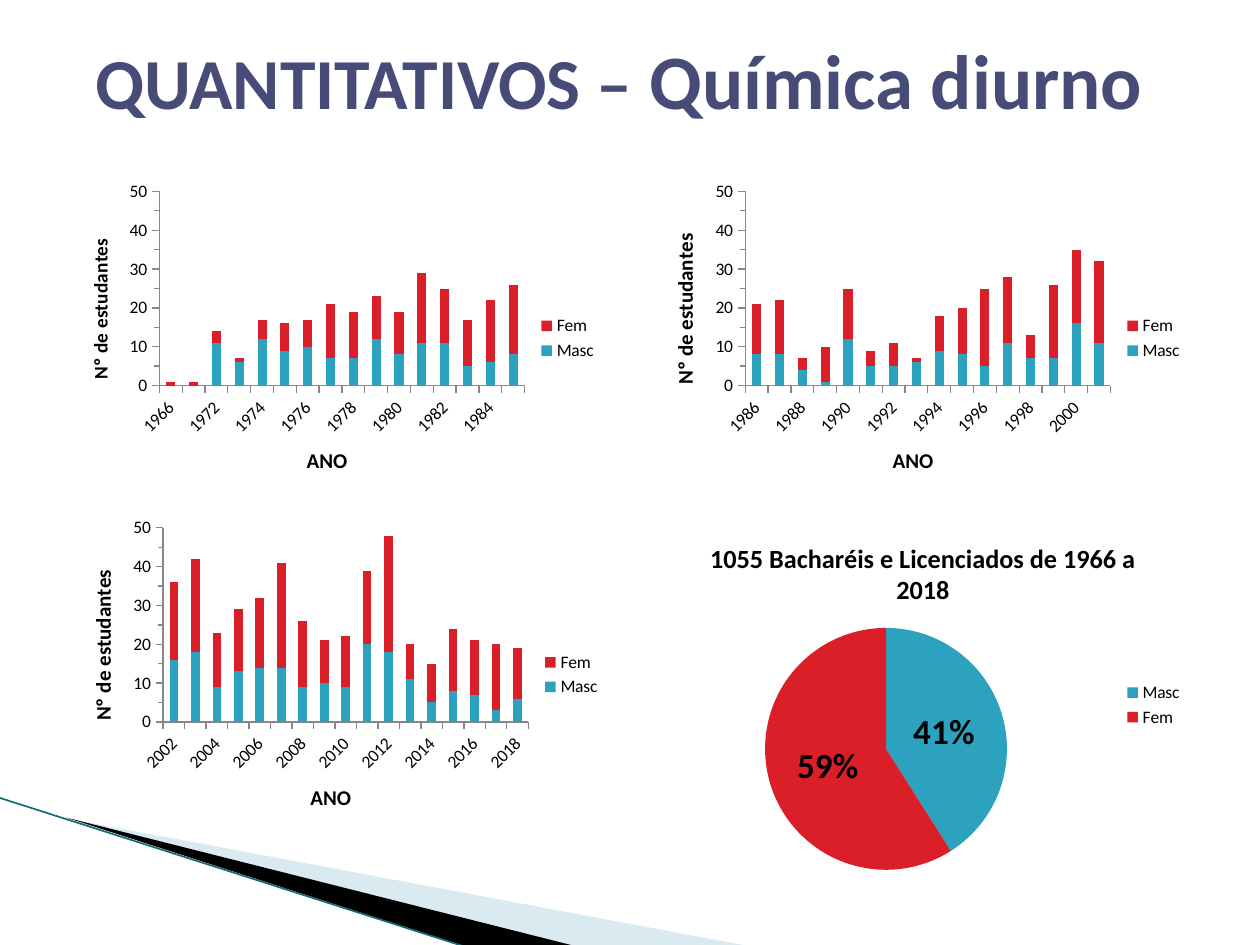
from lxml import etree
from pptx import Presentation, util as u
from pptx.chart.data import CategoryChartData
from pptx.dml.color import RGBColor
from pptx.enum import chart as ch, shapes, text
from pptx.oxml import parse_xml
from pptx.oxml.ns import nsdecls, qn

FONT = "Calibri"
BLACK = RGBColor(0, 0, 0)
AXIS = RGBColor(0x87, 0x87, 0x87)
TITLE = RGBColor(0x47, 0x4B, 0x78)
BLUE = RGBColor(0x2D, 0xA2, 0xBF)
RED = RGBColor(0xDA, 0x1F, 0x28)
PALE = RGBColor(0xA0, 0xCB, 0xDC)
TEAL = RGBColor(0x17, 0x69, 0x7C)

# Content
HEADING = [("QUANTITATIVOS – ", 41), ("Química diurno", 44)]
SERIES = [("Masc", BLUE), ("Fem", RED)]
X_TITLE, Y_TITLE = "ANO", "Nº de estudantes"
BARS = [
    dict(at=(0.48, 1.39), y_size=11, years=[1966, *range(1971, 1986)],
         Masc=[0, 0, 11, 6, 12, 9, 10, 7, 7, 12, 8, 11, 11, 5, 6, 8],
         Fem=[1, 1, 3, 1, 5, 7, 7, 14, 12, 11, 11, 18, 14, 12, 16, 18]),
    dict(at=(5.13, 1.39), y_size=12, years=range(1986, 2002),
         Masc=[8, 8, 4, 1, 12, 5, 5, 6, 9, 8, 5, 11, 7, 7, 16, 11],
         Fem=[13, 14, 3, 9, 13, 4, 6, 1, 9, 12, 20, 17, 6, 19, 19, 21]),
    dict(at=(0.51, 4.06), y_size=12, years=range(2002, 2019),
         Masc=[16, 18, 9, 13, 14, 14, 9, 10, 9, 20, 18, 11, 5, 8, 7, 3, 6],
         Fem=[20, 24, 14, 16, 18, 27, 17, 11, 13, 19, 30, 9, 10, 16, 14, 17, 13]),
]
BAR_SIZE = (4.36, 2.59)
BAR_PLOT = (0.18, 0.05, 0.665, 0.595)  # shares of the chart's size
PIE_TITLE = "1055 Bacharéis e Licenciados de 1966 a 2018"
PIE_VALUES = [41, 59]
PIE_BOX = (5.16, 4.14, 4.33, 2.91)
PIE_PLOT = (0.21, 0.29, 0.445, 0.66)
WEDGES = [
    ([(0.55, 6.5), (5.95, 7.51), (4.56, 7.51)], PALE, 40),
    ([(0.53, 6.49), (4.57, 7.51), (3.72, 7.52)], BLACK, 100),
]
EDGE = (-0.01, 6.33, 3.71, 7.52)


def inches(values):
    return [u.Inches(v) for v in values]


def style(font, size, bold=False, color=BLACK):
    values = dict(name=FONT, size=u.Pt(size), bold=bold)
    for key, value in values.items():
        setattr(font, key, value)
    font.color.rgb = color


def paint(fill, color):
    fill.solid()
    fill.fore_color.rgb = color


def set_title(owner, words, size):
    tf = (owner.chart_title if hasattr(owner, "chart_title") else owner.axis_title).text_frame
    r = tf.paragraphs[0].add_run()
    r.text = words
    style(r.font, size, True)


def place_plot(chart, shares):
    area = chart._chartSpace.chart.plotArea
    for old in area.findall(qn("c:layout")):
        area.remove(old)
    parts = "".join(f'<c:{k} val="{v}"/>' for k, v in zip("xywh", shares))
    area.insert(0, parse_xml(
        f'<c:layout {nsdecls("c")}><c:manualLayout><c:layoutTarget val="inner"/>'
        f'<c:xMode val="edge"/><c:yMode val="edge"/>{parts}</c:manualLayout></c:layout>'))


def add_chart(s, kind, box, data, plot):
    chart = s.shapes.add_chart(kind, *inches(box), data).chart
    style(chart.font, 10)
    chart.has_title = False
    chart.has_legend = True
    chart.legend.position = ch.XL_LEGEND_POSITION.RIGHT
    chart.legend.include_in_layout = False
    place_plot(chart, plot)
    return chart


def add_bars(s, spec):
    data = CategoryChartData()
    data.categories = [str(year) for year in spec["years"]]
    for name, _ in SERIES:
        data.add_series(name, spec[name])
    chart = add_chart(s, ch.XL_CHART_TYPE.COLUMN_STACKED, spec["at"] + BAR_SIZE, data, BAR_PLOT)
    plot = chart.plots[0]
    plot.gap_width, plot.overlap, plot.vary_by_categories = 150, 100, False
    for series, (_, color) in zip(plot.series, SERIES):
        paint(series.format.fill, color)

    x, y = chart.category_axis, chart.value_axis
    for axis, words, size in ((x, X_TITLE, 12), (y, Y_TITLE, spec["y_size"])):
        axis.has_major_gridlines = False
        axis.major_tick_mark = ch.XL_TICK_MARK.OUTSIDE
        axis.format.line.color.rgb = AXIS
        style(axis.tick_labels.font, 10)
        set_title(axis, words, size)
    y.minimum_scale, y.maximum_scale, y.major_unit, y.minor_unit = 0, 50, 10, 5
    y.minor_tick_mark = ch.XL_TICK_MARK.OUTSIDE

    # Slanted labels, every second year
    cat = x._element
    cat.find(qn("c:txPr")).find(qn("a:bodyPr")).set("rot", "-2700000")
    skip = etree.Element(qn("c:tickLblSkip"), val="2")
    cat.find(qn("c:noMultiLvlLbl")).addprevious(skip)


def add_pie(s):
    data = CategoryChartData()
    data.categories = [name for name, _ in SERIES]
    data.add_series("Series 1", PIE_VALUES)
    chart = add_chart(s, ch.XL_CHART_TYPE.PIE, PIE_BOX, data, PIE_PLOT)
    chart.has_title = True
    set_title(chart, PIE_TITLE, 15)
    plot = chart.plots[0]
    for i, (_, color) in enumerate(SERIES):
        paint(plot.series[0].points[i].format.fill, color)
    plot.has_data_labels = True
    labels = plot.data_labels
    labels.show_percentage, labels.show_value = True, False
    labels.number_format, labels.number_format_is_linked = "0%", False
    labels.position = ch.XL_LABEL_POSITION.CENTER
    style(labels.font, 20, True)


def add_decoration(s):
    for points, color, alpha in WEDGES:
        start, *rest = [inches(pt) for pt in points]
        fb = s.shapes.build_freeform(*start)
        fb.add_line_segments(rest, close=True)
        sp = fb.convert_to_shape()
        sp.shadow.inherit = False
        paint(sp.fill, color)
        sp.line.fill.background()
        if alpha < 100:
            clr = sp._element.spPr.find(".//" + qn("a:srgbClr"))
            etree.SubElement(clr, qn("a:alpha"), val=str(alpha * 1000))
    line = s.shapes.add_connector(shapes.MSO_CONNECTOR.STRAIGHT, *inches(EDGE))
    line.line.color.rgb = TEAL
    line.line.width = u.Pt(0.95)
    etree.SubElement(line._element.spPr, qn("a:effectLst"))


def add_heading(s):
    tf = s.shapes.add_textbox(*inches((0.02, 0, 9.79, 1.25))).text_frame
    tf.word_wrap = True
    tf.vertical_anchor = text.MSO_ANCHOR.MIDDLE
    p = tf.paragraphs[0]
    p.alignment = text.PP_ALIGN.CENTER
    for words, size in HEADING:
        r = p.add_run()
        r.text = words
        style(r.font, size, True, TITLE)


def main():
    prs = Presentation()
    prs.slide_width, prs.slide_height = inches((10, 7.5))
    s = prs.slides.add_slide(prs.slide_layouts[6])
    add_decoration(s)
    add_heading(s)
    for spec in BARS:
        add_bars(s, spec)
    add_pie(s)
    prs.save("out.pptx")


if __name__ == "__main__":
    main()
